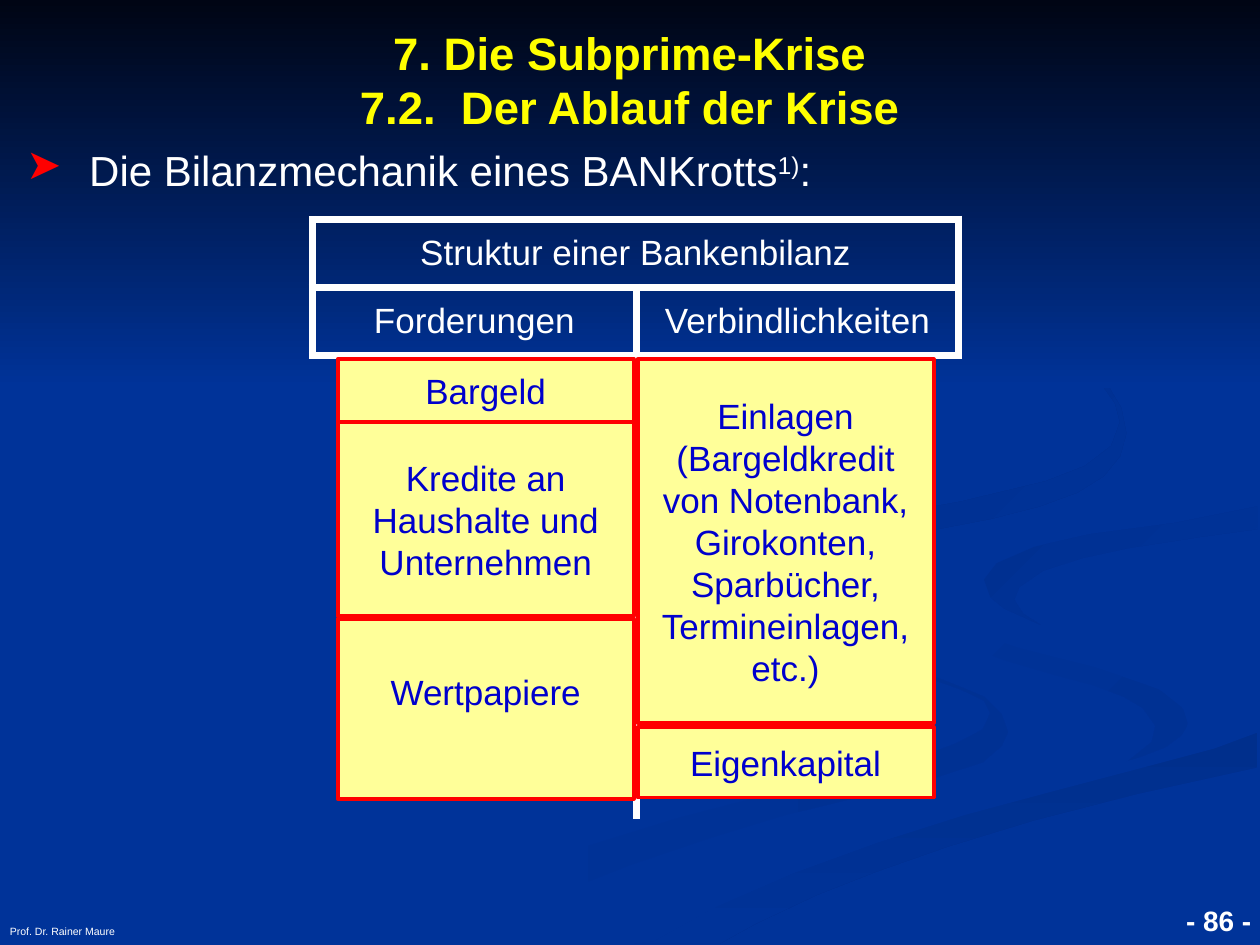
from lxml.etree import SubElement
from pptx import Presentation
from pptx.dml.color import RGBColor
from pptx.enum.shapes import MSO_SHAPE as Shape
from pptx.enum.text import MSO_ANCHOR as Anchor, PP_ALIGN as Align
from pptx.oxml.ns import qn
from pptx.util import Inches, Pt

BLUE = RGBColor(0x00, 0x33, 0x99)
NIGHT = RGBColor(0x00, 0x05, 0x14)
SWIRL_LIGHT = RGBColor(0x00, 0x31, 0x93)
SWIRL_MID = RGBColor(0x00, 0x30, 0x91)
SWIRL_DARK = RGBColor(0x00, 0x2F, 0x8C)
YELLOW = RGBColor(0xFF, 0xFF, 0x00)
CREAM = RGBColor(0xFF, 0xFF, 0x99)
RED = RGBColor(0xFF, 0x00, 0x00)
WHITE = RGBColor(0xFF, 0xFF, 0xFF)
INK = RGBColor(0x00, 0x00, 0xCC)

# Swirl outlines in hundredths of an inch
LOWER_SWIRL = [
    (781, 553), (757, 543), (731, 533), (682, 519), (642, 507), (614, 496),
    (594, 485), (583, 477), (576, 469), (575, 459), (570, 468), (576, 480),
    (593, 491), (631, 505), (679, 519), (728, 535), (762, 547), (781, 556),
    (786, 566), (780, 579), (759, 590), (727, 602), (684, 613), (616, 629),
    (539, 649), (458, 674), (376, 707), (300, 749), (361, 749), (431, 714),
    (499, 687), (564, 665), (623, 647), (676, 634), (740, 618), (780, 605),
    (795, 592), (800, 581), (795, 567)]
MIDDLE_SWIRL = [
    (943, 570), (935, 557), (919, 547), (888, 535), (850, 524), (811, 515),
    (774, 503), (745, 490), (730, 479), (724, 464), (725, 474), (733, 488),
    (746, 500), (766, 512), (797, 524), (838, 536), (868, 544), (892, 553),
    (907, 562), (917, 576), (914, 589), (894, 605), (925, 593), (941, 581)]
BROAD_BAND = [
    (519, 747), (503, 749), (571, 749), (600, 733), (649, 710), (695, 692),
    (752, 672), (821, 651), (903, 630), (998, 609), (998, 581), (963, 594),
    (903, 610), (831, 629), (764, 647), (696, 669), (630, 693), (569, 719)]
PLAIN_BAND = [
    (725, 464), (731, 479), (745, 490), (775, 503), (812, 515), (871, 530),
    (920, 547), (939, 562), (943, 575), (936, 587), (919, 597), (881, 608),
    (812, 625), (743, 643), (663, 668), (573, 703), (477, 749), (503, 749),
    (519, 747), (570, 719), (630, 693), (696, 669), (765, 647), (832, 629),
    (904, 610), (964, 594), (999, 581), (999, 538), (959, 531), (904, 519),
    (848, 503), (804, 485), (786, 473), (781, 463), (792, 447), (822, 434),
    (865, 424), (933, 415), (999, 402), (999, 387), (942, 399), (874, 408),
    (808, 417), (770, 427), (742, 439), (727, 454)]
RIGHT_HOOK = [
    (781, 460), (786, 474), (797, 483), (826, 496), (812, 487), (805, 476),
    (809, 466), (828, 453), (859, 443), (896, 435), (954, 426), (998, 420),
    (998, 402), (933, 415), (865, 424), (821, 434), (791, 447)]
UPPER_SWIRL = [
    (683, 430), (739, 421), (786, 412), (825, 402), (855, 391), (876, 378),
    (889, 362), (894, 344), (890, 324), (880, 307), (864, 291), (843, 275),
    (810, 256), (780, 241), (762, 233), (805, 254), (846, 279), (870, 299),
    (885, 320), (889, 335), (882, 354), (861, 370), (830, 382), (763, 398),
    (676, 414), (625, 426), (597, 437), (580, 451), (578, 468), (590, 484),
    (622, 500), (601, 485), (593, 470), (601, 456), (624, 444), (649, 436)]


def paint_gradient(shape, start, end, angle):
    shape.fill.gradient()
    shape.fill.gradient_angle = (360 - angle) % 360
    for stop, color in zip(shape.fill.gradient_stops, (start, end)):
        stop.color.rgb = color
    shape.line.fill.background()
    shape.shadow.inherit = False


def add_swirl(slide, points, start, end, angle):
    builder = slide.shapes.build_freeform(*points[0], scale=Inches(0.01))
    builder.add_line_segments(points[1:], close=True)
    paint_gradient(builder.convert_to_shape(), start, end, angle)


def add_backdrop(slide):
    slide.background.fill.solid()
    slide.background.fill.fore_color.rgb = BLUE
    add_swirl(slide, LOWER_SWIRL, BLUE, SWIRL_LIGHT, 0)
    add_swirl(slide, MIDDLE_SWIRL, BLUE, SWIRL_LIGHT, 45)
    add_swirl(slide, BROAD_BAND, SWIRL_DARK, BLUE, 90)
    add_swirl(slide, PLAIN_BAND, BLUE, BLUE, 0)
    add_swirl(slide, RIGHT_HOOK, SWIRL_MID, BLUE, 45)
    add_swirl(slide, UPPER_SWIRL, SWIRL_DARK, BLUE, 45)
    sky = slide.shapes.add_shape(Shape.RECTANGLE, 0, 0, Inches(10), Inches(3.08))
    paint_gradient(sky, NIGHT, BLUE, 90)


def style(para, size, color, align, bold=False):
    para.alignment = align
    para.font.name = "Arial"
    para.font.size = Pt(size)
    para.font.bold = bold
    para.font.color.rgb = color


def add_text(slide, area, text, size, color, align, anchor, bold=False):
    box = slide.shapes.add_textbox(*map(Inches, area))
    frame = box.text_frame
    frame.word_wrap = True
    frame.vertical_anchor = anchor
    para = frame.paragraphs[0]
    para.text = text
    style(para, size, color, align, bold)
    return para


def add_bullet(para, mark, color):
    props = para._p.get_or_add_pPr()
    props.set("marL", str(Inches(0.5)))
    props.set("indent", str(-Inches(0.5)))
    bullet_color = SubElement(props, qn("a:buClr"))
    SubElement(bullet_color, qn("a:srgbClr"), val=str(color))
    SubElement(props, qn("a:buChar"), char=mark)


def add_heading(slide):
    para = add_text(slide, (0.11, 1.06, 9.69, 0.66), "", 24, WHITE, Align.LEFT, Anchor.TOP)
    for text, baseline in (("Die Bilanzmechanik eines BANKrotts", 0), ("1)", 30000), (":", 0)):
        span = para.add_run()
        span.text = text
        if baseline:
            span._r.get_or_add_rPr().set("baseline", str(baseline))
    props = para._p.get_or_add_pPr()
    for child in list(props):
        props.remove(child)
    add_bullet(para, "➤", RED)
    style(para, 24, WHITE, Align.LEFT)
    para.line_spacing = 1.1
    para.space_before = Pt(3)


def set_borders(cell, visible):
    props = cell._tc.get_or_add_tcPr()
    for side in "LRTB":
        line = SubElement(props, qn(f"a:ln{side}"), w=str(Pt(4.5)))
        if side in visible:
            fill = SubElement(line, qn("a:solidFill"))
            SubElement(fill, qn("a:srgbClr"), val=str(WHITE))
        else:
            SubElement(line, qn("a:noFill"))
    cell.fill.background()


def add_balance_table(slide):
    frame = slide.shapes.add_table(3, 2, *map(Inches, (2.48, 1.74, 5.13, 4.75)))
    table = frame.table
    table.first_row = table.horz_banding = False
    for column, width in zip(table.columns, (2.57, 2.56)):
        column.width = Inches(width)
    for row, height in zip(table.rows, (0.54, 0.54, 3.68)):
        row.height = Inches(height)
    for index, sides in enumerate(("LRTB", "LRTB", "LRTB", "LRTB", "RT", "LT")):
        set_borders(table.cell(*divmod(index, 2)), sides)
    table.cell(0, 0).merge(table.cell(0, 1))
    labels = {(0, 0): "Struktur einer Bankenbilanz",
              (1, 0): "Forderungen", (1, 1): "Verbindlichkeiten"}
    for place, text in labels.items():
        cell = table.cell(*place)
        cell.text = text
        cell.vertical_anchor = Anchor.MIDDLE
        style(cell.text_frame.paragraphs[0], 20, WHITE, Align.CENTER)


def add_position(slide, text, left, top, height):
    box = slide.shapes.add_shape(Shape.RECTANGLE, *map(Inches, (left, top, 2.35, height)))
    box.shadow.inherit = False
    box.fill.solid()
    box.fill.fore_color.rgb = CREAM
    box.line.color.rgb = RED
    box.line.width = Pt(2.25)
    frame = box.text_frame
    frame.word_wrap = True
    frame.vertical_anchor = Anchor.MIDDLE
    frame.text = text
    style(frame.paragraphs[0], 20, INK, Align.CENTER)
    return frame


def main():
    deck = Presentation()
    deck.slide_width, deck.slide_height = Inches(10), Inches(7.5)
    slide = deck.slides.add_slide(deck.slide_layouts[6])
    add_backdrop(slide)
    add_text(slide, (0.5, 0.03, 9, 1.2), "7. Die Subprime-Krise\v7.2.  Der Ablauf der Krise",
             26, YELLOW, Align.CENTER, Anchor.MIDDLE, bold=True)
    add_text(slide, (7.7, 6.97, 2.33, 0.52), "- 86 -", 16, WHITE, Align.RIGHT, Anchor.BOTTOM, bold=True)
    add_text(slide, (-0.02, 6.97, 6.18, 0.52), "Prof. Dr. Rainer Maure", 6, WHITE, Align.LEFT, Anchor.BOTTOM)
    add_heading(slide)
    add_balance_table(slide)
    assets, liabilities = 2.68, 5.06
    add_position(slide, "Einlagen (Bargeldkredit von Notenbank, Girokonten, Sparbücher, "
                 "Termineinlagen, etc.)", liabilities, 2.85, 2.89)
    add_position(slide, "Kredite an Haushalte und Unternehmen", assets, 3.35, 1.54)
    securities = add_position(slide, "Wertpapiere", assets, 4.91, 1.43)
    securities.vertical_anchor = Anchor.TOP
    securities.margin_top = Inches(0.41)
    add_position(slide, "Eigenkapital", liabilities, 5.77, 0.56)
    add_position(slide, "Bargeld", assets, 2.85, 0.5)
    deck.save("out.pptx")


if __name__ == "__main__":
    main()
